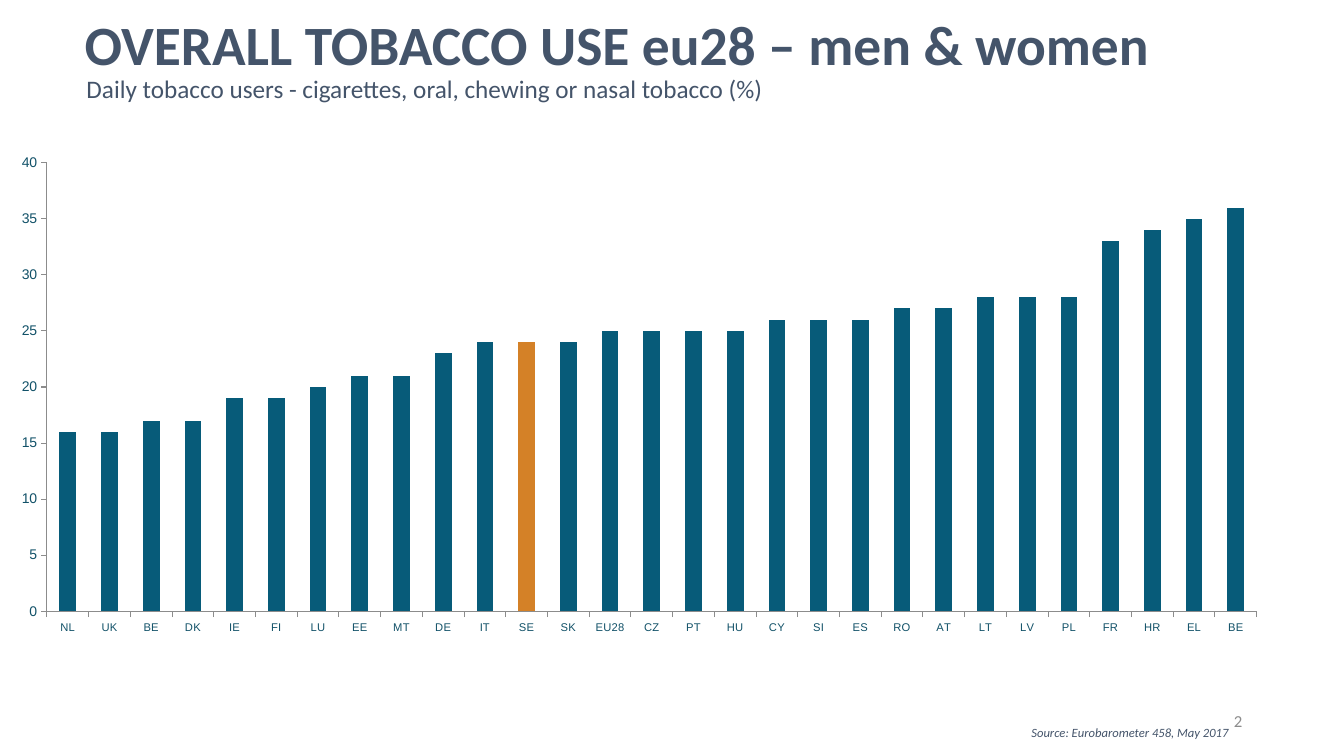
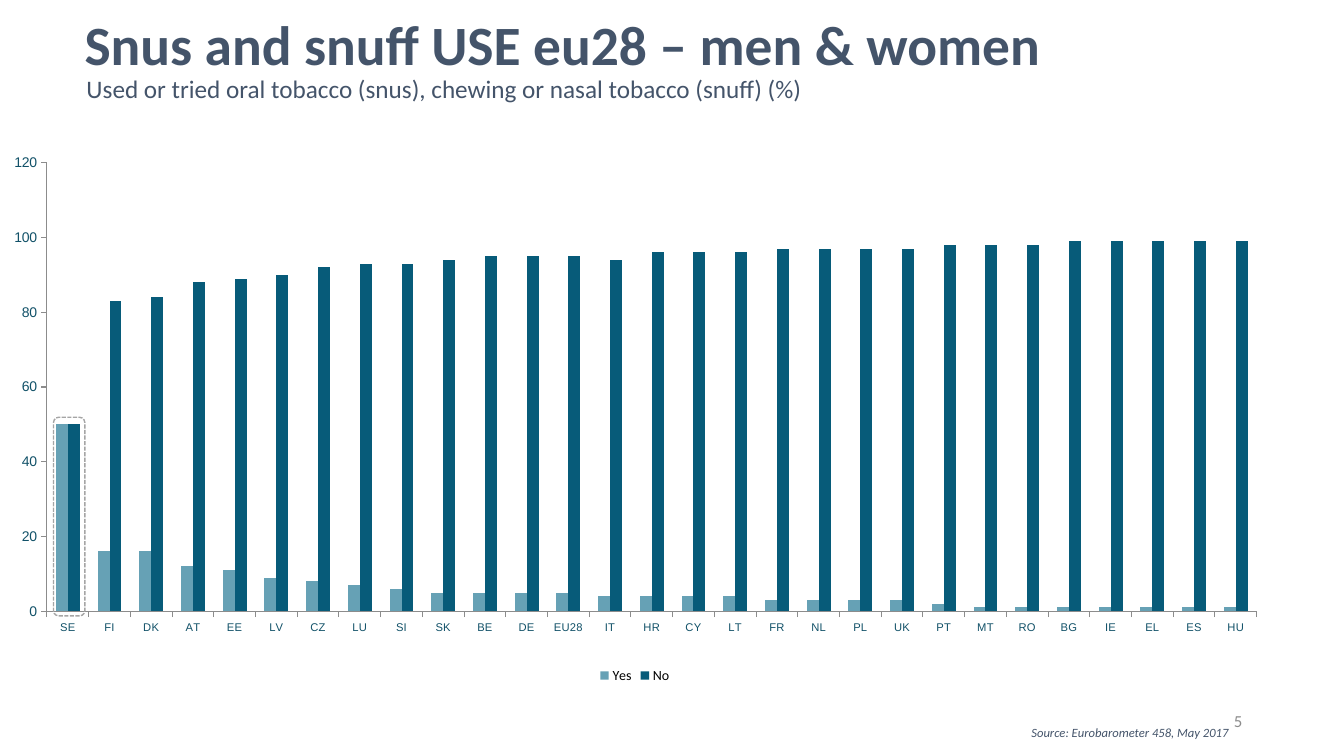
from dataclasses import dataclass
from typing import NamedTuple, Optional

from lxml.etree import SubElement
from pptx import Presentation
from pptx.chart.chart import Chart
from pptx.chart.data import CategoryChartData
from pptx.dml.color import RGBColor
from pptx.enum.chart import XL_CHART_TYPE, XL_LEGEND_POSITION, XL_TICK_MARK
from pptx.enum.dml import MSO_LINE
from pptx.enum.shapes import MSO_SHAPE
from pptx.enum.text import MSO_ANCHOR, PP_ALIGN
from pptx.oxml.ns import qn
from pptx.slide import Slide
from pptx.util import Inches, Pt

WIDTH, HEIGHT = Inches(13.33), Inches(7.5)

SLATE = RGBColor(0x44, 0x54, 0x6A)
GREY = RGBColor(0x8C, 0x8C, 0x8C)
OUTLINE = RGBColor(0xA5, 0xA5, 0xA5)
BLACK = RGBColor(0, 0, 0)
AXIS_TEXT = RGBColor(0x11, 0x51, 0x68)
PETROL = RGBColor(0x07, 0x5B, 0x79)
LIGHT_PETROL = RGBColor(0x66, 0xA1, 0xB5)
ORANGE = RGBColor(0xD4, 0x81, 0x27)


class Box(NamedTuple):
    """Left, top, width and height in percent of the container."""
    left: float
    top: float
    width: float
    height: float

    def on_slide(self) -> tuple[int, int, int, int]:
        sides = (WIDTH, HEIGHT, WIDTH, HEIGHT)
        return tuple(round(share * side / 100) for share, side in zip(self, sides))


@dataclass(frozen=True)
class TextStyle:
    box: Box
    size: float
    color: RGBColor = SLATE
    bold: bool = False
    italic: bool = False
    align: PP_ALIGN = PP_ALIGN.LEFT
    anchor: MSO_ANCHOR = MSO_ANCHOR.TOP
    line_spacing: float = 1.0


@dataclass(frozen=True)
class Series:
    name: str
    values: list[int]
    color: RGBColor


@dataclass(frozen=True)
class ChartPage:
    number: int
    title: str
    subtitle: str
    countries: list[str]
    series: list[Series]
    axis_maximum: int
    axis_step: int
    accent_country: Optional[str] = None
    frame: Optional[Box] = None


TITLE = TextStyle(Box(5.55, 3.2, 94.45, 6.27), 39.6, bold=True,
                  anchor=MSO_ANCHOR.MIDDLE, line_spacing=0.9)
SUBTITLE = TextStyle(Box(5.7, 9.07, 72.62, 9.47), 18)
SOURCE = TextStyle(Box(76, 95.2, 19.43, 3.07), 9, italic=True)
PAGE_NUMBER = TextStyle(Box(70.67, 92.67, 22.5, 5.33), 12, GREY,
                        align=PP_ALIGN.RIGHT, anchor=MSO_ANCHOR.MIDDLE)
CHART_BOX = Box(0, 19.6, 94.45, 71.33)
PLOT_BOX = Box(3.7, 2.7, 95.3, 83.2)
SOURCE_TEXT = "Source: Eurobarometer 458, May 2017"

PAGES = [
    ChartPage(
        number=2,
        title="OVERALL TOBACCO USE eu28 – men & women",
        subtitle="Daily tobacco users - cigarettes, oral, chewing or nasal tobacco (%)",
        countries="NL UK BE DK IE FI LU EE MT DE IT SE SK EU28 CZ PT HU CY SI ES "
                  "RO AT LT LV PL FR HR EL BE".split(),
        series=[Series("Series 1", [16, 16, 17, 17, 19, 19, 20, 21, 21, 23, 24, 24, 24, 25, 25,
                                    25, 25, 26, 26, 26, 27, 27, 28, 28, 28, 33, 34, 35, 36],
                       PETROL)],
        axis_maximum=40,
        axis_step=5,
        accent_country="SE",
    ),
    ChartPage(
        number=5,
        title="Snus and snuff USE eu28 – men & women",
        subtitle="Used or tried oral tobacco (snus), chewing or nasal tobacco (snuff) (%)",
        countries="SE FI DK AT EE LV CZ LU SI SK BE DE EU28 IT HR CY LT FR NL PL "
                  "UK PT MT RO BG IE EL ES HU".split(),
        series=[
            Series("Yes", [50, 16, 16, 12, 11, 9, 8, 7, 6, 5, 5, 5, 5, 4, 4,
                           4, 4, 3, 3, 3, 3, 2, 1, 1, 1, 1, 1, 1, 1], LIGHT_PETROL),
            Series("No", [50, 83, 84, 88, 89, 90, 92, 93, 93, 94, 95, 95, 95, 94, 96,
                          96, 96, 97, 97, 97, 97, 98, 98, 98, 99, 99, 99, 99, 99], PETROL),
        ],
        axis_maximum=120,
        axis_step=20,
        frame=Box(3.98, 55.2, 2.33, 26.27),
    ),
]


def add_text(slide: Slide, text: str, style: TextStyle) -> None:
    frame = slide.shapes.add_textbox(*style.box.on_slide()).text_frame
    frame.word_wrap = True
    frame.vertical_anchor = style.anchor
    para = frame.paragraphs[0]
    para.text = text
    para.alignment = style.align
    para.line_spacing = style.line_spacing
    font = para.font
    font.name, font.size = "Calibri", Pt(style.size)
    font.bold, font.italic = style.bold, style.italic
    font.color.rgb = style.color


def place_plot(chart: Chart, box: Box) -> None:
    plot_area = chart.element.chart.plotArea
    for layout in plot_area.findall(qn("c:layout")):
        plot_area.remove(layout)
    layout = SubElement(plot_area, qn("c:layout"))
    plot_area.insert(0, layout)
    manual = SubElement(layout, qn("c:manualLayout"))
    settings = {"layoutTarget": "inner", "xMode": "edge", "yMode": "edge"}
    settings |= {key: f"{share / 100:.3f}" for key, share in zip("xywh", box)}
    for key, value in settings.items():
        SubElement(manual, qn(f"c:{key}")).set("val", value)


def style_axes(chart: Chart, page: ChartPage) -> None:
    for axis, size in ((chart.category_axis, 8), (chart.value_axis, 10)):
        axis.has_major_gridlines = False
        axis.major_tick_mark = XL_TICK_MARK.OUTSIDE
        axis.minor_tick_mark = XL_TICK_MARK.NONE
        axis.format.line.color.rgb = GREY
        axis.format.line.width = Pt(0.75)
        font = axis.tick_labels.font
        font.name, font.size = "Arial", Pt(size)
        font.color.rgb = AXIS_TEXT
    chart.value_axis.minimum_scale = 0
    chart.value_axis.maximum_scale = page.axis_maximum
    chart.value_axis.major_unit = page.axis_step


def add_column_chart(slide: Slide, page: ChartPage) -> None:
    data = CategoryChartData()
    data.categories = page.countries
    for series in page.series:
        data.add_series(series.name, series.values)
    chart = slide.shapes.add_chart(
        XL_CHART_TYPE.COLUMN_CLUSTERED, *CHART_BOX.on_slide(), data).chart
    chart.has_title = False
    chart.font.name, chart.font.size = "Calibri", Pt(18)
    chart.font.color.rgb = BLACK
    place_plot(chart, PLOT_BOX)
    style_axes(chart, page)

    plot = chart.plots[0]
    plot.gap_width, plot.overlap, plot.vary_by_categories = 150, 0, False
    for columns, series in zip(plot.series, page.series):
        columns.format.fill.solid()
        columns.format.fill.fore_color.rgb = series.color
    if page.accent_country:
        accent = plot.series[0].points[page.countries.index(page.accent_country)]
        accent.format.fill.solid()
        accent.format.fill.fore_color.rgb = ORANGE

    chart.has_legend = len(page.series) > 1
    if chart.has_legend:
        chart.legend.position = XL_LEGEND_POSITION.BOTTOM
        chart.legend.include_in_layout = False
        chart.legend.font.size = Pt(10)


def add_dashed_frame(slide: Slide, box: Box) -> None:
    frame = slide.shapes.add_shape(MSO_SHAPE.ROUNDED_RECTANGLE, *box.on_slide())
    frame.shadow.inherit = False
    frame.fill.background()
    frame.line.color.rgb = OUTLINE
    frame.line.width = Pt(1)
    frame.line.dash_style = MSO_LINE.SQUARE_DOT


def main() -> None:
    deck = Presentation()
    deck.slide_width, deck.slide_height = WIDTH, HEIGHT
    for page in PAGES:
        slide = deck.slides.add_slide(deck.slide_layouts[6])
        add_text(slide, str(page.number), PAGE_NUMBER)
        add_text(slide, page.title, TITLE)
        add_column_chart(slide, page)
        add_text(slide, SOURCE_TEXT, SOURCE)
        add_text(slide, page.subtitle, SUBTITLE)
        if page.frame:
            add_dashed_frame(slide, page.frame)
    deck.save("out.pptx")


if __name__ == "__main__":
    main()
